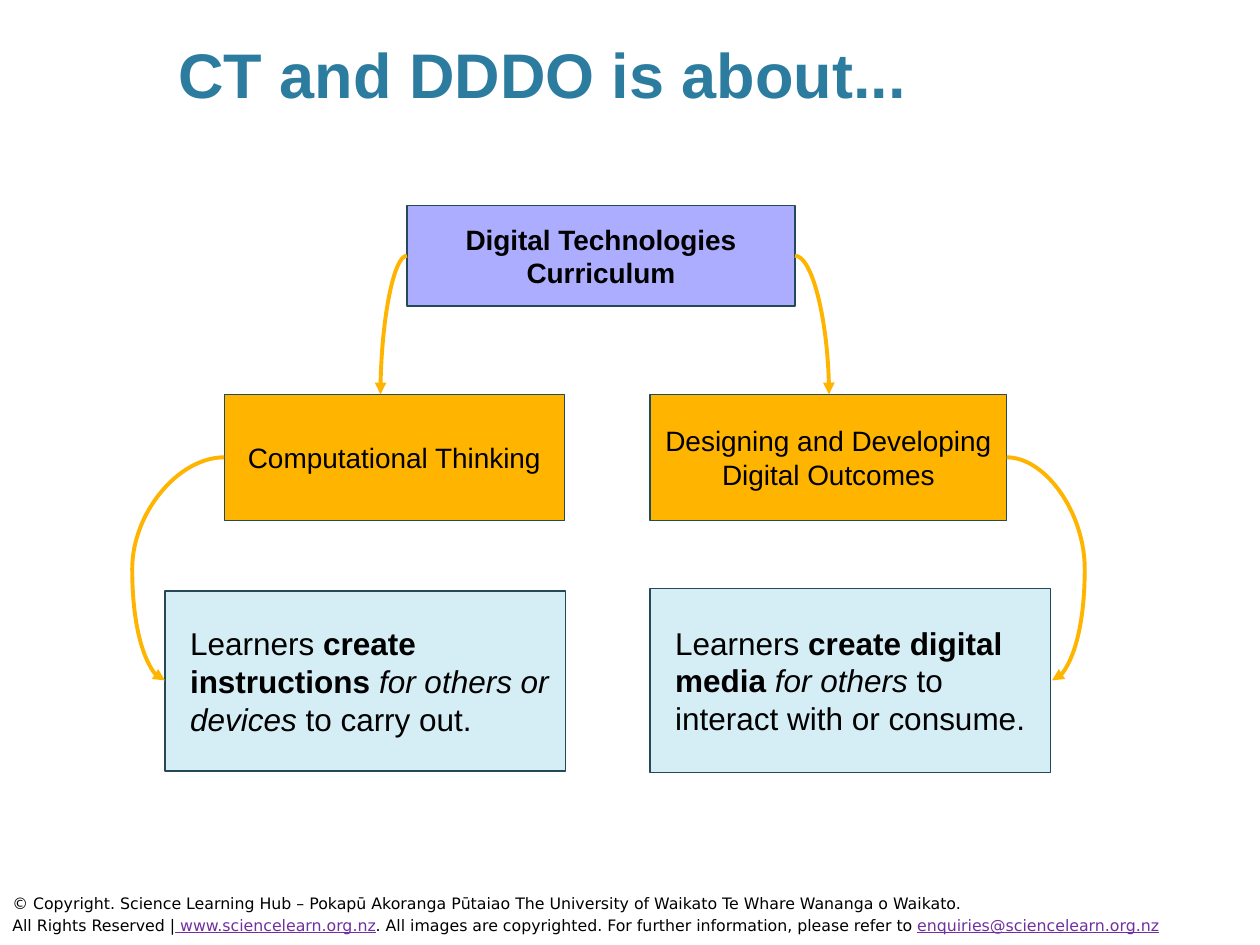
from lxml.etree import SubElement
from pptx import Presentation
from pptx.dml.color import RGBColor
from pptx.enum.shapes import MSO_CONNECTOR, MSO_SHAPE
from pptx.enum.text import MSO_ANCHOR, PP_ALIGN
from pptx.oxml.ns import qn
from pptx.util import Inches, Pt


class Theme:
    FONT, FOOTER_FONT = "Arial", "DejaVu Sans"
    TITLE, TEXT, LINK = "2C7C9F", "000000", "7030A0"
    ROOT, BRANCH, LEAF = "0000FF", "FFB400", "D5EDF4"
    OUTLINE, ARROW = "244A58", "FFB400"
    TITLE_SIZE, LABEL_SIZE, LEAF_SIZE, FOOTER_SIZE = 36, 16, 18, 9
    OUTLINE_WIDTH, ARROW_WIDTH = 0.75, 2.25
    INSET, ROOT_OPACITY = 0.1, 32


# Content: a paragraph is a list of (text, style) runs; style letters are
# b = bold, i = italic, l = link look
TITLE = [[("CT and DDDO is about...", "b")]]
ROOT = [[("Digital Technologies Curriculum", "b")]]
BRANCHES = [  # left, width, paragraphs
    (1.78, 2.7, [[("Computational Thinking", "")]]),
    (5.16, 2.83, [[("Designing and Developing Digital Outcomes", "")]]),
]
LEAVES = [  # left, top, height, paragraphs
    (1.31, 4.69, 1.43, [[("Learners ", ""), ("create instructions ", "b"),
                         ("for others or devices", "i"), (" to carry out.", "")]]),
    (5.16, 4.67, 1.46, [[("Learners ", ""), ("create digital media ", "b"),
                         ("for others", "i"), (" to interact with or consume.", "")]]),
]
FOOTER = [
    [("© Copyright. Science Learning Hub – Pokapū Akoranga Pūtaiao "
      "The University of Waikato Te Whare Wananga o Waikato.", "")],
    [("All Rights Reserved |", ""), (" www.sciencelearn.org.nz", "l"),
     (". All images are copyrighted. For further information, please refer to ", ""),
     ("enquiries@sciencelearn.org.nz", "l")],
]

# Arrows: start, end, and for the outer loops the x they swing out to
ARROWS = [
    ((3.23, 2.03), (3.02, 3.13), None),
    ((1.78, 3.63), (1.31, 5.4), 1.05),
    ((6.31, 2.03), (6.58, 3.13), None),
    ((7.99, 3.63), (8.35, 5.4), 8.61),
]


def write(shape, paragraphs, size, font=Theme.FONT, color=Theme.TEXT,
          align=PP_ALIGN.LEFT, anchor=MSO_ANCHOR.MIDDLE, indent=0, spacing=None):
    frame = shape.text_frame
    frame.word_wrap = True
    frame.vertical_anchor = anchor
    frame.margin_left = frame.margin_right = Inches(Theme.INSET)
    frame.margin_top = frame.margin_bottom = Inches(Theme.INSET)
    for index, runs in enumerate(paragraphs):
        paragraph = frame.add_paragraph() if index else frame.paragraphs[0]
        paragraph.alignment = align
        paragraph.line_spacing = spacing
        if indent:
            properties = paragraph._p.get_or_add_pPr()
            properties.set("marL", str(Inches(indent)))
            properties.set("indent", "0")
        for text, style in runs:
            run = paragraph.add_run()
            run.text = text
            run.font.name = font
            run.font.size = Pt(size)
            run.font.bold = "b" in style
            run.font.italic = "i" in style
            run.font.underline = "l" in style
            run.font.color.rgb = RGBColor.from_string(Theme.LINK if "l" in style else color)


def add_text(slide, box, paragraphs, size, **text_format):
    shape = slide.shapes.add_textbox(*map(Inches, box))
    write(shape, paragraphs, size, **text_format)


def add_box(slide, box, fill, paragraphs, size, opacity=None, **text_format):
    shape = slide.shapes.add_shape(MSO_SHAPE.RECTANGLE, *map(Inches, box))
    shape.shadow.inherit = False
    shape.fill.solid()
    shape.fill.fore_color.rgb = RGBColor.from_string(fill)
    if opacity:
        color = shape._element.spPr.find(qn("a:solidFill"))[0]
        SubElement(color, qn("a:alpha")).set("val", str(opacity * 1000))
    shape.line.color.rgb = RGBColor.from_string(Theme.OUTLINE)
    shape.line.width = Pt(Theme.OUTLINE_WIDTH)
    write(shape, paragraphs, size, **text_format)


def add_arrow(slide, start, end, swing):
    connector = slide.shapes.add_connector(
        MSO_CONNECTOR.CURVE, *map(Inches, (*start, *end)))
    connector.line.color.rgb = RGBColor.from_string(Theme.ARROW)
    connector.line.width = Pt(Theme.ARROW_WIDTH)
    properties = connector._element.spPr
    SubElement(properties.find(qn("a:ln")), qn("a:tailEnd")).set("type", "triangle")
    SubElement(properties, qn("a:effectLst"))
    geometry = properties.find(qn("a:prstGeom"))
    if swing is None:
        geometry.set("prst", "curvedConnector2")
    else:
        share = (swing - start[0]) / (end[0] - start[0])
        guide = SubElement(geometry.get_or_add_avLst(), qn("a:gd"))
        guide.set("name", "adj1")
        guide.set("fmla", f"val {round(share * 100000)}")


def main():
    presentation = Presentation()
    presentation.slide_width, presentation.slide_height = Inches(10), Inches(7.5)
    slide = presentation.slides.add_slide(presentation.slide_layouts[6])

    # Title
    add_text(slide, (0.34, 0.12, 7.93, 0.86), TITLE, Theme.TITLE_SIZE,
             color=Theme.TITLE, align=PP_ALIGN.CENTER, anchor=MSO_ANCHOR.BOTTOM)

    # Curriculum tree
    add_box(slide, (3.23, 1.63, 3.08, 0.8), Theme.ROOT, ROOT, Theme.LABEL_SIZE,
            opacity=Theme.ROOT_OPACITY, align=PP_ALIGN.CENTER)
    for left, width, paragraphs in BRANCHES:
        add_box(slide, (left, 3.13, width, 1), Theme.BRANCH, paragraphs,
                Theme.LABEL_SIZE, align=PP_ALIGN.CENTER)
    for left, top, height, paragraphs in LEAVES:
        add_box(slide, (left, top, 3.18, height), Theme.LEAF, paragraphs,
                Theme.LEAF_SIZE, indent=0.1)
    for start, end, swing in ARROWS:
        add_arrow(slide, start, end, swing)

    # Copyright footer
    add_text(slide, (0, 6.97, 10, 0.53), FOOTER, Theme.FOOTER_SIZE,
             font=Theme.FOOTER_FONT, anchor=MSO_ANCHOR.TOP, spacing=1.15)

    presentation.save("out.pptx")


if __name__ == "__main__":
    main()
